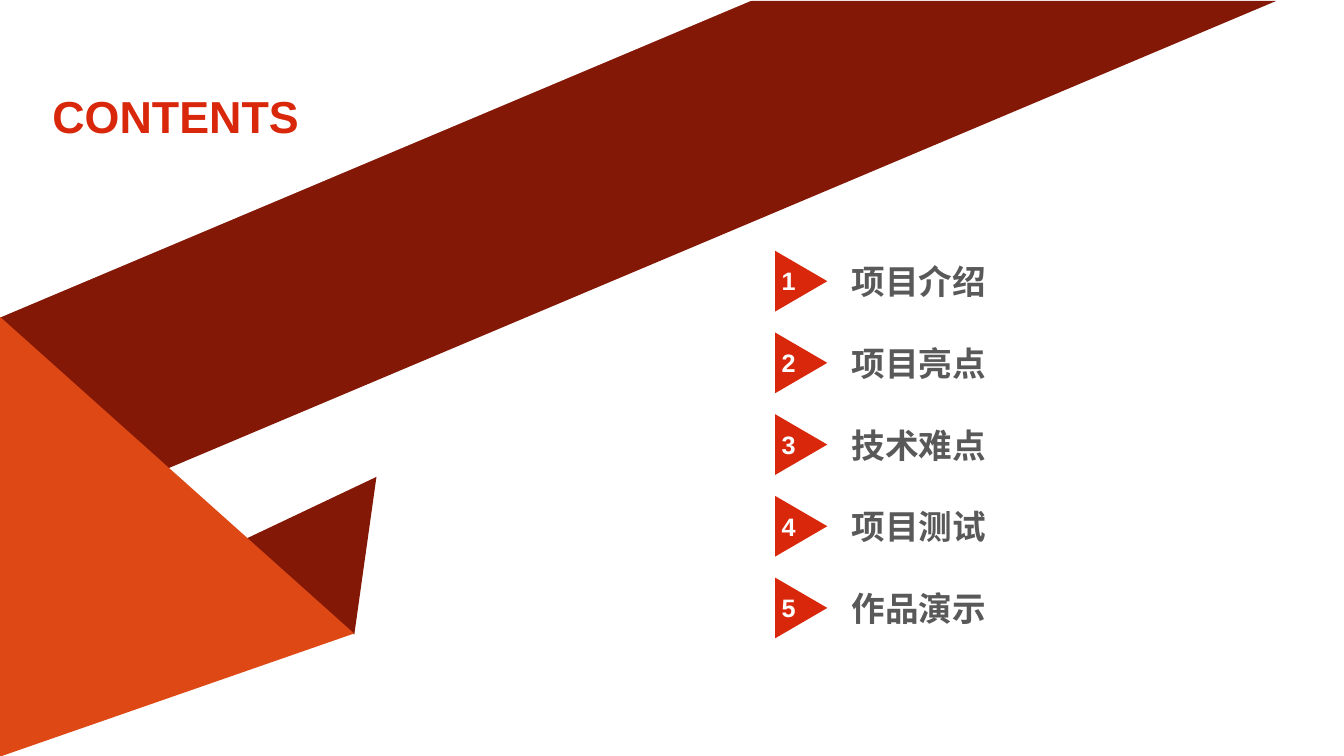
from dataclasses import dataclass

from lxml.etree import SubElement
from pptx import Presentation
from pptx.dml.color import RGBColor
from pptx.enum.shapes import MSO_SHAPE as Preset
from pptx.enum.text import MSO_ANCHOR as Anchor
from pptx.enum.text import MSO_AUTO_SIZE as AutoSize
from pptx.enum.text import PP_ALIGN as Align
from pptx.oxml.ns import qn
from pptx.util import Pt


@dataclass(frozen=True)
class Theme:
    """Colours, fonts and type sizes of the slide."""
    ribbon: str = "831806"
    fold: str = "DD4814"
    accent: str = "D8270A"
    text: str = "595959"
    white: str = "FFFFFF"
    latin: str = "Arial"
    chinese: str = "Noto Sans CJK SC"
    title_size: int = 32
    item_size: int = 24
    number_size: int = 18


THEME = Theme()
TOPICS = ("项目介绍", "项目亮点", "技术难点", "项目测试", "作品演示")
FIRST_ROW = 182.2
ROW_PITCH = 58.35
ITEM_LINE = 28.75
ITEM_DROP = 4.3


def place(shape, left, top, width, height):
    """Move and size a shape in points."""
    shape.left, shape.top = Pt(left), Pt(top)
    shape.width, shape.height = Pt(width), Pt(height)


def add_triangle(page, preset, frame, color, rotation, flipped=False):
    """Draw a flat, rotated triangle."""
    shape = page.shapes.add_shape(preset, *map(Pt, frame))
    shape.shadow.inherit = False
    shape.fill.solid()
    shape.fill.fore_color.rgb = RGBColor.from_string(color)
    shape.line.fill.background()
    shape.rotation = rotation
    if flipped:
        shape.element.spPr.find(qn("a:xfrm")).set("flipH", "1")
    return shape


def add_span(para, text, size, color, font):
    """Add one bold run."""
    span = para.add_run()
    span.text = text
    span.font.size = Pt(size)
    span.font.bold = True
    span.font.name = font
    span.font.color.rgb = RGBColor.from_string(color)
    SubElement(span.font._element, qn("a:ea")).set("typeface", font)


def add_ribbon(page):
    """Draw the folded ribbon behind the contents."""
    right_angle, isosceles = Preset.RIGHT_TRIANGLE, Preset.ISOSCELES_TRIANGLE
    add_triangle(page, right_angle, (0, 0.7, 911.5, 384.5), THEME.ribbon, 180, True)
    add_triangle(page, right_angle, (0, 0, 537.8, 226.8), THEME.white, 180, True)
    add_triangle(page, isosceles, (161.3, 347.8, 113.8, 86.4), THEME.ribbon, 278)
    fold = add_triangle(page, isosceles, (-30.4, 257, 314, 252.8), THEME.fold, 90, True)
    fold.adjustments[0] = 0.28


def fill_title(page):
    """Set the heading in the title placeholder, above the ribbon."""
    title = page.shapes.title
    page.shapes.element.append(title.element)
    place(title, 30.2, 59.8, 192.2, 46)
    frame = title.text_frame
    frame.auto_size, frame.word_wrap = AutoSize.NONE, False
    frame.vertical_anchor = Anchor.MIDDLE
    para = frame.paragraphs[0]
    para.alignment = Align.LEFT
    add_span(para, "CONTENTS", THEME.title_size, THEME.accent, THEME.latin)


def fill_topics(page):
    """Set the topics in the body placeholder, one for each marker."""
    body = page.placeholders[1]
    page.shapes.element.append(body.element)
    place(body, 601, FIRST_ROW + ITEM_DROP, 198.7, ROW_PITCH * len(TOPICS))
    frame = body.text_frame
    frame.auto_size, frame.word_wrap = AutoSize.NONE, True
    frame.margin_top = frame.margin_bottom = 0
    frame.vertical_anchor = Anchor.TOP
    for index, topic in enumerate(TOPICS):
        para = frame.add_paragraph() if index else frame.paragraphs[0]
        para.alignment = Align.LEFT
        para.space_before, para.space_after = Pt(0), Pt(ROW_PITCH - ITEM_LINE)
        props = para._p.get_or_add_pPr()
        props.set("marL", "0")
        props.set("indent", "0")
        SubElement(props, qn("a:buNone"))
        add_span(para, topic, THEME.item_size, THEME.text, THEME.chinese)


def add_marker(page, number, top):
    """Draw a numbered triangle pointing at its topic."""
    frame = (550.6, top, 43.4, 37.3)
    add_triangle(page, Preset.ISOSCELES_TRIANGLE, frame, THEME.accent, 90)
    box = page.shapes.add_textbox(Pt(551.3), Pt(top + 4.1), Pt(24.4), Pt(28.8))
    box.text_frame.word_wrap = False
    para = box.text_frame.paragraphs[0]
    add_span(para, str(number), THEME.number_size, THEME.white, THEME.latin)


def main():
    """Build the contents slide."""
    deck = Presentation()
    deck.slide_width, deck.slide_height = Pt(960), Pt(540)
    page = deck.slides.add_slide(deck.slide_layouts[1])
    add_ribbon(page)
    fill_title(page)
    fill_topics(page)
    for index in range(len(TOPICS)):
        add_marker(page, index + 1, FIRST_ROW + index * ROW_PITCH)
    deck.save("out.pptx")


if __name__ == "__main__":
    main()
